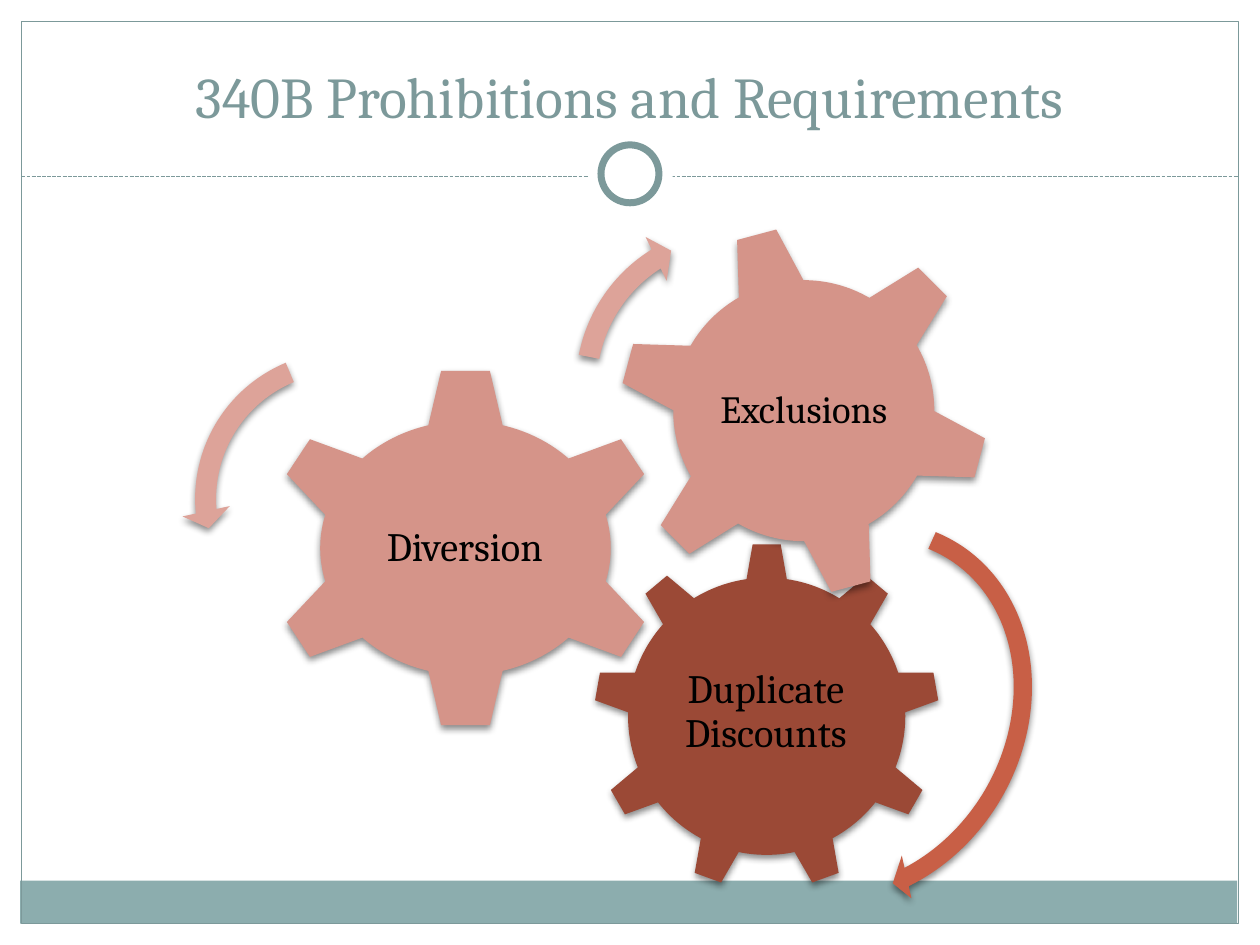
from dataclasses import dataclass
from typing import Optional

from lxml.etree import SubElement
from pptx import Presentation
from pptx.dml.color import RGBColor
from pptx.enum.dml import MSO_LINE
from pptx.enum.shapes import MSO_CONNECTOR, MSO_SHAPE as SHAPE
from pptx.enum.text import MSO_ANCHOR as ANCHOR, PP_ALIGN
from pptx.oxml.ns import qn
from pptx.util import Inches, Pt

COLORS = {
    "white": "FFFFFF", "black": "000000", "teal": "7C999A", "band": "8CADAE",
    "brick": "9B4936", "rose": "D59489", "rust": "C85F46", "blush": "DDA399",
}
FONT = "Cambria"
Box = tuple[float, float, float, float]


@dataclass
class Gear:
    kind: SHAPE
    box: Box
    color: str
    label: str
    label_box: Box
    size: int = 23
    rotation: float = 0


@dataclass
class TurnArrow:
    kind: SHAPE
    box: Box
    color: str
    adjustments: tuple[float, ...]
    rotation: float = 0


def rgb(name: str) -> RGBColor:
    return RGBColor.from_string(COLORS[name])


def add_shape(slide, kind: SHAPE, box: Box, fill: Optional[str] = None,
              line: Optional[str] = None, width: float = 0.75, rotation: float = 0):
    sp = slide.shapes.add_shape(kind, *map(Inches, box))
    sp.shadow.inherit = False
    sp.rotation = rotation
    if fill:
        sp.fill.solid()
        sp.fill.fore_color.rgb = rgb(fill)
    else:
        sp.fill.background()
    if line:
        sp.line.color.rgb = rgb(line)
        sp.line.width = Pt(width)
    else:
        sp.line.fill.background()
    return sp


def add_shadow(sp) -> None:
    effects = sp._element.spPr.find(qn("a:effectLst"))
    shadow = SubElement(effects, qn("a:outerShdw"), blurRad=str(Pt(4)), dist=str(Pt(2)),
                        dir="5400000", rotWithShape="0")
    color = SubElement(shadow, qn("a:srgbClr"), val=COLORS["black"])
    SubElement(color, qn("a:alpha"), val="45000")


def add_text(slide, text: str, box: Box, *, size: float, color: str = "black",
             anchor: ANCHOR = ANCHOR.MIDDLE, inset: Optional[float] = None,
             spacing: Optional[float] = None) -> None:
    tf = slide.shapes.add_textbox(*map(Inches, box)).text_frame
    tf.word_wrap = True
    tf.vertical_anchor = anchor
    if inset is not None:
        tf.margin_left = tf.margin_right = tf.margin_top = tf.margin_bottom = Inches(inset)
    p = tf.paragraphs[0]
    p.alignment = PP_ALIGN.CENTER
    p.line_spacing = spacing
    r = p.add_run()
    r.text = text
    r.font.name = FONT
    r.font.size = Pt(size)
    r.font.color.rgb = rgb(color)


def add_gear(slide, gear: Gear) -> None:
    add_shadow(add_shape(slide, gear.kind, gear.box, gear.color, rotation=gear.rotation))
    add_text(slide, gear.label, gear.label_box, size=gear.size, inset=0.03, spacing=0.9)


def add_turn_arrow(slide, arrow: TurnArrow) -> None:
    sp = add_shape(slide, arrow.kind, arrow.box, arrow.color, rotation=arrow.rotation)
    for i, value in enumerate(arrow.adjustments):
        sp.adjustments[i] = value
    add_shadow(sp)


def add_frame(slide) -> None:
    # Margins, footer band and border
    for box in ((0, 0, 10, 1.52), (0, 0, 0.17, 7.5), (9.83, 0, 0.17, 7.5)):
        add_shape(slide, SHAPE.RECTANGLE, box, "white")
    add_shape(slide, SHAPE.RECTANGLE, (0.16, 6.99, 9.66, 0.34), "band")
    add_shape(slide, SHAPE.RECTANGLE, (0.17, 0.17, 9.66, 7.16), line="teal")

    # Dashed rule under the title
    rule = slide.shapes.add_connector(MSO_CONNECTOR.STRAIGHT,
                                      *map(Inches, (0.17, 1.4, 9.83, 1.4)))
    rule.line.color.rgb = rgb("teal")
    rule.line.width = Pt(0.75)
    rule.line.dash_style = MSO_LINE.SQUARE_DOT
    SubElement(rule._element.spPr, qn("a:effectLst"))

    # Ring on the rule
    add_shape(slide, SHAPE.OVAL, (4.67, 1.05, 0.67, 0.67), "white")
    add_shape(slide, SHAPE.OVAL, (4.77, 1.15, 0.46, 0.46), "white", "teal", 4)


GEARS = (
    Gear(SHAPE.GEAR_9, (4.71, 4.31, 2.75, 2.75), "brick",
         "Duplicate Discounts", (5.26, 4.95, 1.64, 1.41)),
    Gear(SHAPE.GEAR_6, (2.11, 2.91, 3.17, 2.88), "rose",
         "Diversion", (2.87, 3.64, 1.64, 1.42)),
    Gear(SHAPE.GEAR_6, (4.9, 1.78, 2.96, 2.96), "rose",
         "Exclusions", (5.55, 2.43, 1.66, 1.66), size=22, rotation=345),
)
TURN_ARROWS = (
    TurnArrow(SHAPE.CIRCULAR_ARROW, (5.33, 3.98, 2.9, 3.36), "rust",
              (0.05, 2.99, 25.25, 158.43, 0.06), rotation=30.2),
    TurnArrow(SHAPE.LEFT_CIRCULAR_ARROW, (1.44, 2.68, 2.56, 2.56), "blush",
              (0.065, 4.3, 104.89, 148.38, 0.075)),
    TurnArrow(SHAPE.CIRCULAR_ARROW, (4.46, 1.68, 2.76, 2.76), "blush",
              (0.06, 3.94, 133.14, 105.08, 0.07), rotation=15.9),
)


def main() -> None:
    prs = Presentation()
    prs.slide_width, prs.slide_height = Inches(10), Inches(7.5)
    s = prs.slides.add_slide(prs.slide_layouts[6])

    add_frame(s)
    add_text(s, "340B Prohibitions and Requirements", (0.33, 0.25, 9.33, 0.83),
             size=33, color="teal", anchor=ANCHOR.BOTTOM)

    # Interlocking gears and their turning arrows
    for gear in GEARS:
        add_gear(s, gear)
    for arrow in TURN_ARROWS:
        add_turn_arrow(s, arrow)

    prs.save("out.pptx")


if __name__ == "__main__":
    main()
